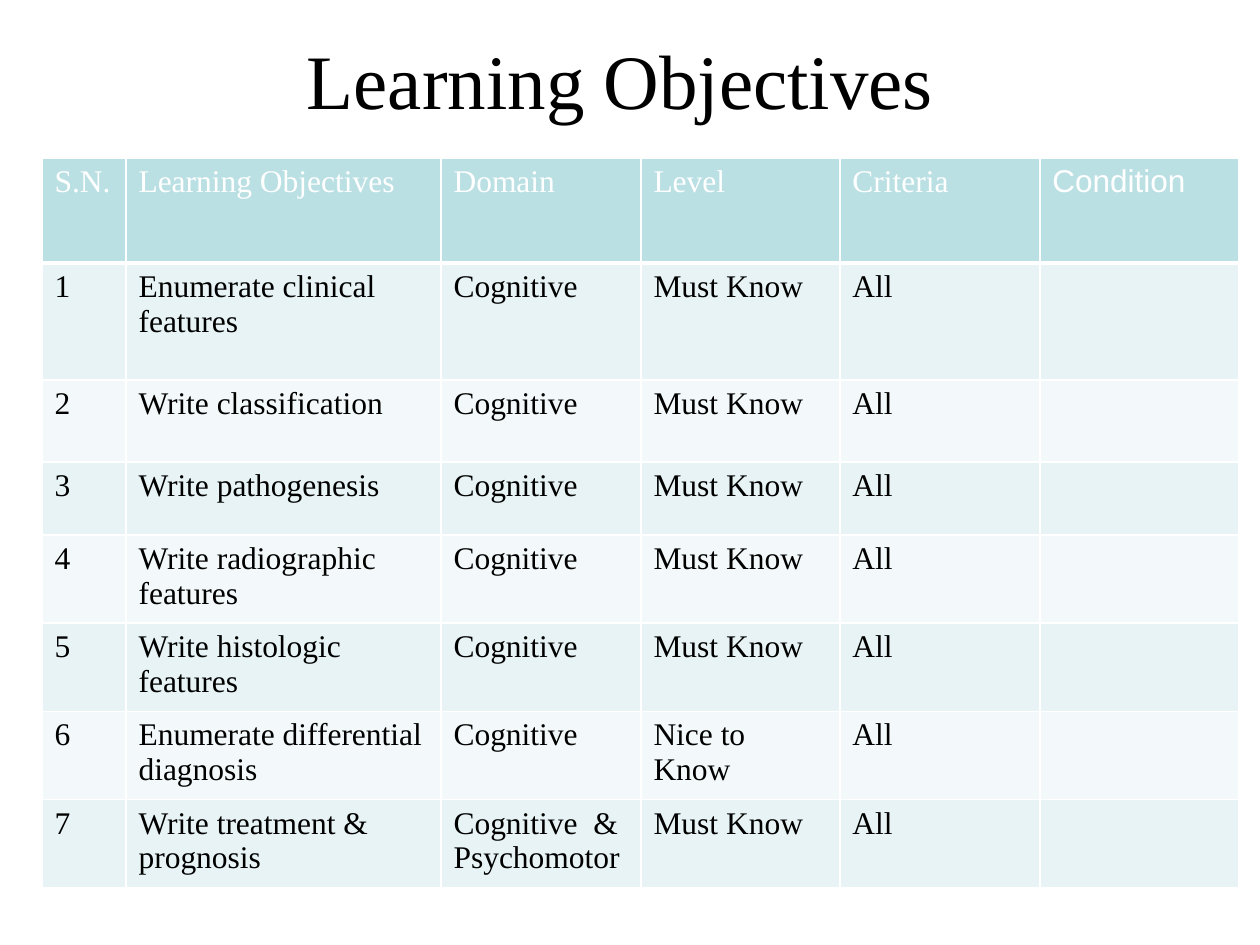
from lxml.etree import SubElement
from pptx import Presentation
from pptx.dml.color import RGBColor
from pptx.enum.text import MSO_ANCHOR, PP_ALIGN
from pptx.oxml.ns import qn
from pptx.util import Emu, Pt

PX = 914400 // 126
SERIF, SANS = "Times New Roman", "Arial"
BLACK, WHITE = "000000", "FFFFFF"
HEADER_FILL, BAND_FILLS = "BBE0E3", ("E7F3F4", "F3F9FA")

HEADINGS = ["S.N.", "Learning Objectives", "Domain", "Level", "Criteria", "Condition"]
OBJECTIVES = [
    ("Enumerate clinical features", "Cognitive", "Must Know"),
    ("Write classification", "Cognitive", "Must Know"),
    ("Write pathogenesis", "Cognitive", "Must Know"),
    ("Write radiographic features", "Cognitive", "Must Know"),
    ("Write histologic features", "Cognitive", "Must Know"),
    ("Enumerate differential diagnosis", "Cognitive", "Nice to Know"),
    ("Write treatment & prognosis", "Cognitive  & Psychomotor", "Must Know"),
]
COLUMN_WIDTHS = [84, 315, 200, 199, 200, 199]
ROW_HEIGHTS = [105, 117, 82, 73, 82, 82, 82, 82]


def px(length):
    return Emu(length * PX)


def color(hex_string):
    return RGBColor.from_string(hex_string)


def style(paragraph, size, font_name, hex_string):
    paragraph.font.size = Pt(size)
    paragraph.font.name = font_name
    paragraph.font.color.rgb = color(hex_string)


def set_borders(cell, bottom):
    """Draw white cell borders, 1 pt except for the given bottom width."""
    properties = cell._tc.get_or_add_tcPr()
    widths = {"a:lnL": 1, "a:lnR": 1, "a:lnT": 1, "a:lnB": bottom}
    for index, (tag, width) in enumerate(widths.items()):
        line = SubElement(properties, qn(tag), w=str(Pt(width)))
        fill = SubElement(line, qn("a:solidFill"))
        SubElement(fill, qn("a:srgbClr"), val=WHITE)
        properties.insert(index, line)  # borders come before the cell fill


def add_title(slide, left, top, width, height):
    box = slide.shapes.add_textbox(px(left), px(top), px(width), px(height))
    frame = box.text_frame
    frame.word_wrap = True
    frame.vertical_anchor = MSO_ANCHOR.MIDDLE
    paragraph = frame.paragraphs[0]
    paragraph.text = "Learning Objectives "
    paragraph.alignment = PP_ALIGN.CENTER
    style(paragraph, 44, SERIF, BLACK)


def fill_cell(cell, text, font_name, text_color, fill_color, bottom):
    cell.fill.solid()
    cell.fill.fore_color.rgb = color(fill_color)
    set_borders(cell, bottom)
    cell.text = text
    style(cell.text_frame.paragraphs[0], 18, font_name, text_color)


def add_objectives_table(slide, left, top):
    frame = slide.shapes.add_table(
        len(ROW_HEIGHTS), len(COLUMN_WIDTHS), px(left), px(top),
        px(sum(COLUMN_WIDTHS)), px(sum(ROW_HEIGHTS)))
    table = frame.table
    for column, width in zip(table.columns, COLUMN_WIDTHS):
        column.width = px(width)
    for row, height in zip(table.rows, ROW_HEIGHTS):
        row.height = px(height)

    # Header row
    for cell, heading in zip(table.rows[0].cells, HEADINGS):
        font_name = SANS if heading == "Condition" else SERIF
        fill_cell(cell, heading, font_name, WHITE, HEADER_FILL, 3)

    # Numbered objectives in alternating bands
    for number, objective in enumerate(OBJECTIVES, start=1):
        values = [str(number), *objective, "All", ""]
        band = BAND_FILLS[(number - 1) % 2]
        for cell, value in zip(table.rows[number].cells, values):
            fill_cell(cell, value, SERIF, BLACK, band, 1)


def main():
    presentation = Presentation()
    presentation.slide_width, presentation.slide_height = px(1260), px(945)
    slide = presentation.slides.add_slide(presentation.slide_layouts[6])
    add_title(slide, 63, 0, 1134, 158)
    add_objectives_table(slide, 42, 158)
    presentation.save("out.pptx")


if __name__ == "__main__":
    main()
